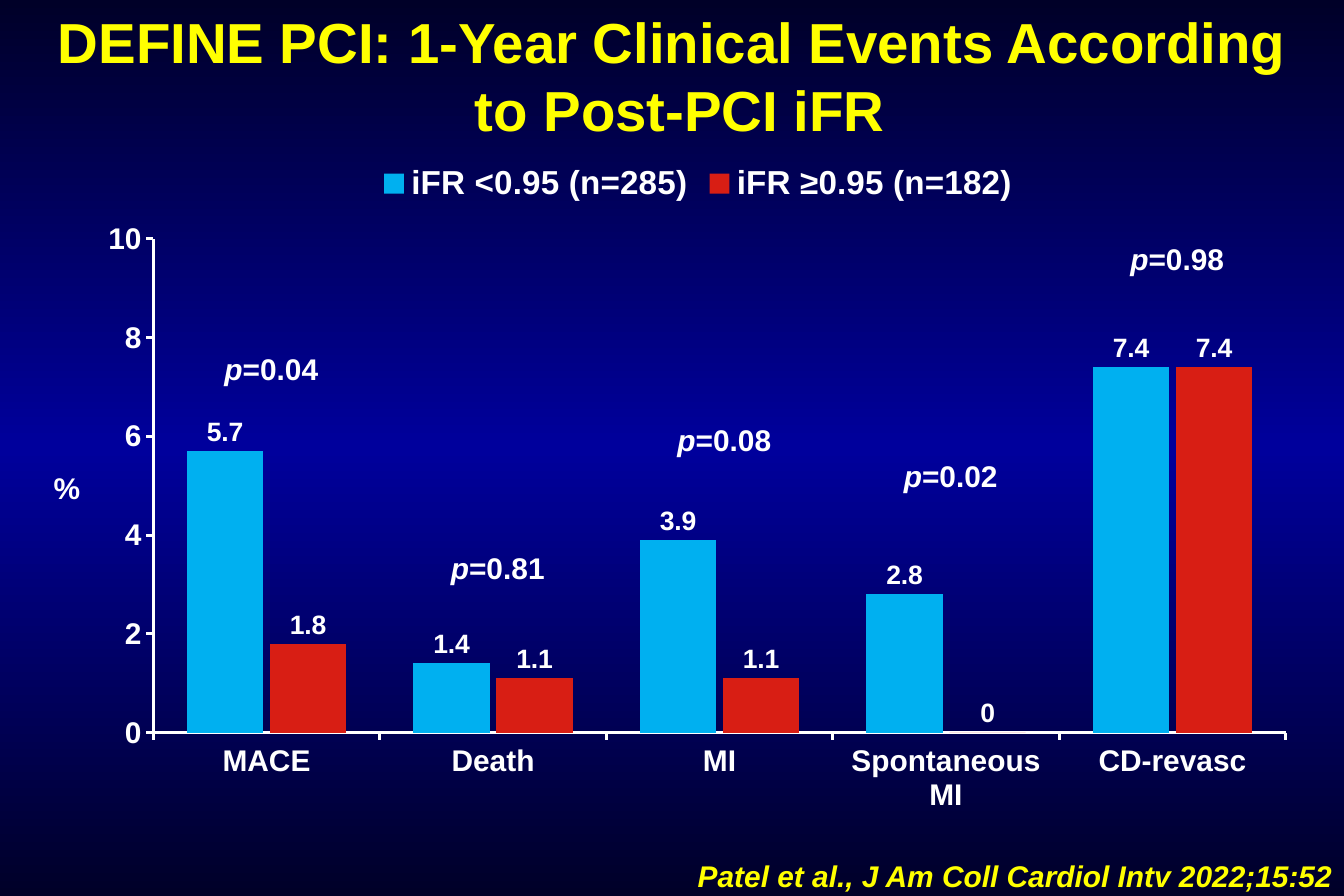
from copy import deepcopy

from lxml.etree import SubElement
from pptx import Presentation
from pptx.chart.data import CategoryChartData
from pptx.dml.color import RGBColor
from pptx.enum.chart import (XL_CHART_TYPE, XL_LABEL_POSITION,
                             XL_LEGEND_POSITION, XL_TICK_MARK)
from pptx.enum.text import MSO_ANCHOR, PP_ALIGN
from pptx.oxml.ns import qn
from pptx.util import Cm, Pt

COLORS = {"dark": "000028", "mid": "00009C", "title": "FFFF00",
          "text": "FFFFFF", "low": "00B0F0", "high": "D81E14"}
EVENTS = ["MACE", "Death", "MI", "Spontaneous MI", "CD-revasc"]
GROUPS = [("iFR <0.95 (n=285)", "low", [5.7, 1.4, 3.9, 2.8, 7.4]),
          ("iFR ≥0.95 (n=182)", "high", [1.8, 1.1, 1.1, 0, 7.4])]
# p-value of each event and its top, in cm below the chart's top
PVALUES = [("0.04", 4.16), ("0.81", 8.38), ("0.08", 5.66),
           ("0.02", 6.42), ("0.98", 1.82)]
PLOT = {"x": 0.056, "y": 0.132, "w": 0.923, "h": 0.729}


def rgb(name):
    return RGBColor.from_string(COLORS[name])


def style(font, size=18, color="text", italic=False):
    font.name = "Arial"
    font.size = Pt(size)
    font.bold = True
    font.italic = italic
    font.color.rgb = rgb(color)


def write(para, text, align=PP_ALIGN.CENTER, **fmt):
    """Append one formatted run to a paragraph."""
    para.alignment = align
    run = para.add_run()
    run.text = text
    style(run.font, **fmt)


def add_box(slide, left, top, width, height=1.02):
    """Add an empty text box, in cm, and return its frame."""
    box = slide.shapes.add_textbox(Cm(left), Cm(top), Cm(width), Cm(height))
    box.text_frame.word_wrap = True
    return box.text_frame


def paint(slide):
    """Fill the background with a dark, mid, dark gradient."""
    fill = slide.background.fill
    fill.gradient()
    fill.gradient_angle = 90
    stops = next(slide.element.iter(qn("a:gsLst")))
    stops.append(deepcopy(stops[0]))
    for stop, place, name in zip(fill.gradient_stops, (0, 0.5, 1),
                                 ("dark", "mid", "dark")):
        stop.position = place
        stop.color.rgb = rgb(name)


def add_title(slide, left, top, width, height):
    title = slide.shapes.title
    title.left, title.top = Cm(left), Cm(top)
    title.width, title.height = Cm(width), Cm(height)
    frame = title.text_frame
    frame.vertical_anchor = MSO_ANCHOR.MIDDLE
    write(frame.paragraphs[0], "DEFINE PCI: 1-Year Clinical Events According",
          size=34, color="title")
    write(frame.add_paragraph(), " to Post-PCI iFR", size=34, color="title")


def fix_plot(chart):
    """Pin the inner plot area to the fractions in PLOT."""
    area = chart.element.chart.plotArea
    for old in area.findall(qn("c:layout")):
        area.remove(old)
    layout = SubElement(area, qn("c:layout"))
    area.insert(0, layout)
    manual = SubElement(layout, qn("c:manualLayout"))
    parts = [("layoutTarget", "inner"), ("xMode", "edge"), ("yMode", "edge")]
    for tag, val in parts + list(PLOT.items()):
        SubElement(manual, qn(f"c:{tag}")).set("val", str(val))


def add_bars(slide, left, top, width, height):
    data = CategoryChartData()
    data.categories = EVENTS
    for name, _, values in GROUPS:
        data.add_series(name, values)
    chart = slide.shapes.add_chart(
        XL_CHART_TYPE.COLUMN_CLUSTERED, Cm(left), Cm(top),
        Cm(width), Cm(height), data).chart
    chart.has_title = False
    chart.has_legend = True
    chart.legend.position = XL_LEGEND_POSITION.TOP
    chart.legend.include_in_layout = False
    style(chart.legend.font, size=20)

    plot = chart.plots[0]
    plot.gap_width, plot.overlap = 88, -9
    plot.vary_by_categories = False
    for series, (_, color, _) in zip(plot.series, GROUPS):
        series.format.fill.solid()
        series.format.fill.fore_color.rgb = rgb(color)
        labels = series.data_labels
        labels.show_value = True
        labels.position = XL_LABEL_POSITION.OUTSIDE_END
        style(labels.font, size=16)

    for axis in (chart.category_axis, chart.value_axis):
        axis.has_major_gridlines = False
        axis.major_tick_mark = XL_TICK_MARK.OUTSIDE
        axis.minor_tick_mark = XL_TICK_MARK.NONE
        axis.format.line.color.rgb = rgb("text")
        axis.format.line.width = Pt(1.75)
        style(axis.tick_labels.font)
    scale = chart.value_axis
    scale.minimum_scale, scale.maximum_scale = 0, 10
    scale.major_unit = 2
    fix_plot(chart)


def add_notes(slide, left, top, width, height):
    """Place the unit and the p-values over the chart's box."""
    unit = add_box(slide, left - 1.16, top + 6.68, 1.57)
    write(unit.paragraphs[0], "%")
    step, span = width * PLOT["w"] / len(EVENTS), 3.3
    first = left + width * PLOT["x"] + step / 2 + 0.1
    for i, (value, drop) in enumerate(PVALUES):
        para = add_box(slide, first + i * step - span / 2,
                       top + drop, span).paragraphs[0]
        write(para, "p", italic=True)
        write(para, f"={value}")


def add_source(slide, left, top, width, height):
    frame = add_box(slide, left, top, width, height)
    frame.margin_left = 0
    write(frame.paragraphs[0],
          "Patel et al., J Am Coll Cardiol Intv 2022;15:52",
          align=PP_ALIGN.RIGHT, color="title", italic=True)


def main():
    deck = Presentation()
    deck.slide_width, deck.slide_height = Cm(28.58), Cm(19.05)
    slide = deck.slides.add_slide(deck.slide_layouts[5])
    paint(slide)
    add_title(slide, 0, 0, 28.58, 3.18)
    add_source(slide, 14.58, 18.11, 14, 1.02)
    body = (1.8, 3.18, 26.09, 14.4)
    add_bars(slide, *body)
    add_notes(slide, *body)
    deck.save("out.pptx")


if __name__ == "__main__":
    main()
